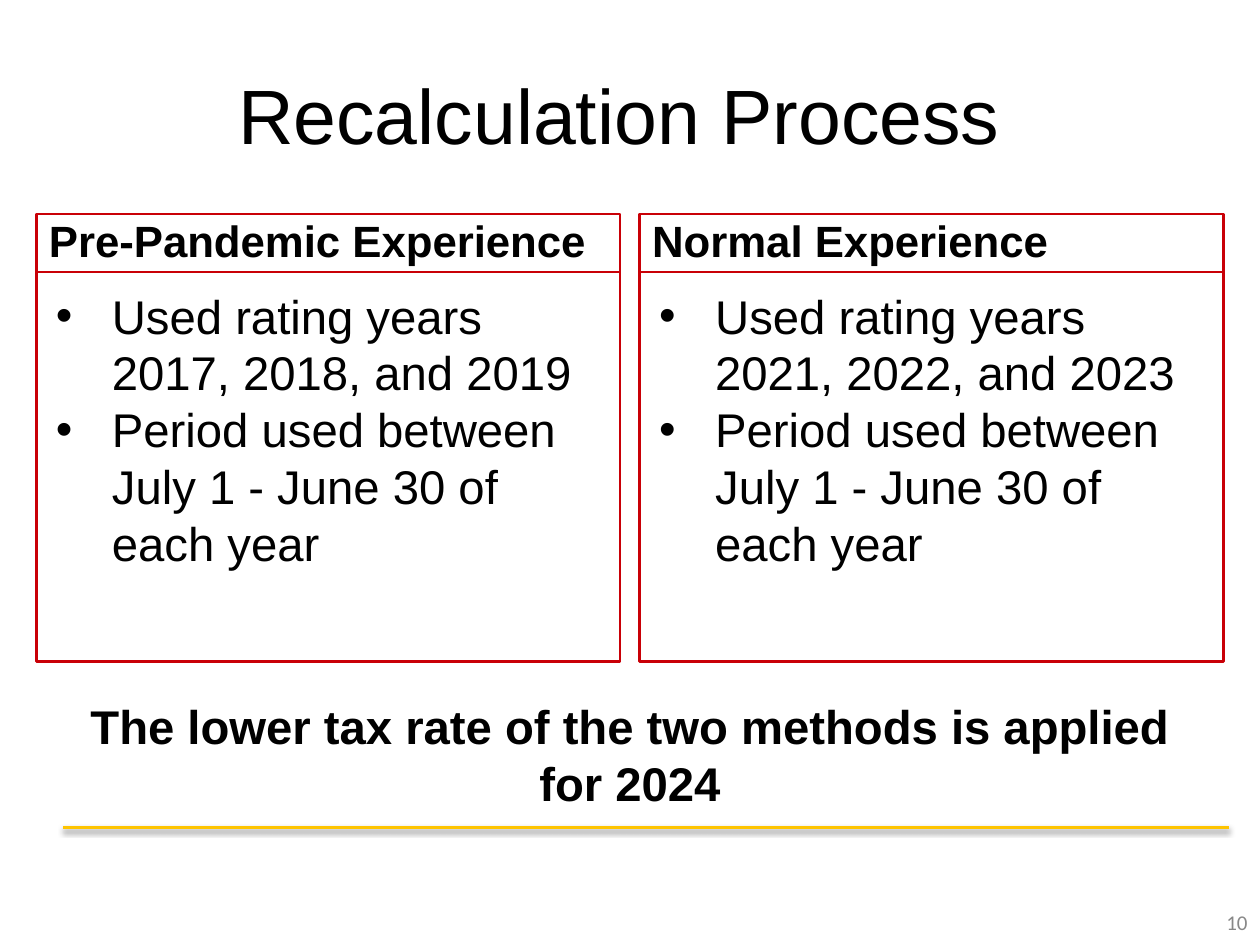
from lxml import etree
from pptx import Presentation
from pptx import util as u
from pptx.dml.color import RGBColor
from pptx.enum import shapes, text
from pptx.oxml import ns

Pt = u.Pt
RED, GOLD, BLACK, GREY = "C90007", "FEC400", "000000", "888888"


def color(value):
    return RGBColor.from_string(value)


def add_text(lines, left, top, width, height, *, size, font="Arial", fill=BLACK,
             bold=False, align="LEFT", anchor="MIDDLE", border=None,
             bullets=False, inset_top=3.6):
    """Add a box with one paragraph per line; border draws a red-style frame."""
    place = Pt(left), Pt(top), Pt(width), Pt(height)
    if border:
        box = page.shapes.add_shape(shapes.MSO_SHAPE.RECTANGLE, *place)
        box.shadow.inherit = False
        box.fill.background()
        box.line.color.rgb = color(border)
        box.line.width = Pt(1.5)
    else:
        box = page.shapes.add_textbox(*place)
    frame = box.text_frame
    frame.word_wrap = True
    frame.vertical_anchor = getattr(text.MSO_ANCHOR, anchor)
    frame.margin_top = Pt(inset_top)
    for number, line in enumerate(lines):
        para = frame.add_paragraph() if number else frame.paragraphs[0]
        para.alignment = getattr(text.PP_ALIGN, align)
        if bullets:
            props = para._p.get_or_add_pPr()
            props.set("marL", str(Pt(36)))
            props.set("indent", str(Pt(-32)))
            etree.SubElement(props, ns.qn("a:buFont"), typeface="Arial")
            etree.SubElement(props, ns.qn("a:buChar"), char="•")
        span = para.add_run()
        span.text = line
        span.font.name = font
        span.font.size = Pt(size)
        span.font.bold = bold
        span.font.color.rgb = color(fill)


deck = Presentation()
deck.slide_width, deck.slide_height = Pt(720), Pt(540)
page = deck.slides.add_slide(deck.slide_layouts[6])

# Gold footer rule with a soft shadow
rule = page.shapes.add_connector(
    shapes.MSO_CONNECTOR.STRAIGHT, Pt(36), Pt(473), Pt(702), Pt(473))
rule.line.color.rgb = color(GOLD)
rule.line.width = Pt(2)
effects = etree.SubElement(rule._element.spPr, ns.qn("a:effectLst"))
shadow = etree.SubElement(
    effects, ns.qn("a:outerShdw"), blurRad=str(Pt(3.1)), dist=str(Pt(1.6)),
    dir="5400000", rotWithShape="0")
shade = etree.SubElement(shadow, ns.qn("a:srgbClr"), val=BLACK)
etree.SubElement(shade, ns.qn("a:alpha"), val="37000")

add_text(["Recalculation Process "], 36, 20.25, 648, 90, size=44, align="CENTER")
add_text(["10"], 552, 512.5, 168, 28.8, size=12, font="Calibri", fill=GREY,
         align="RIGHT")

# Two methods side by side: heading above, details below
methods = [
    ("Pre-Pandemic Experience", "2017, 2018, and 2019"),
    ("Normal Experience", "2021, 2022, and 2023"),
]
column_width, column_step = 333.4, 344.7
heading_top, heading_height, details_height = 122.4, 33.1, 222.7
for column, (heading, years) in enumerate(methods):
    left = 20.9 + column * column_step
    add_text([heading], left, heading_top, column_width, heading_height,
             size=25, bold=True, anchor="BOTTOM", border=RED)
    add_text([f"Used rating years {years}",
              "Period used between July 1 - June 30 of each year"],
             left, heading_top + heading_height, column_width, details_height,
             size=27, anchor="TOP", border=RED, bullets=True, inset_top=8.4)

add_text(["The lower tax rate of the two methods is applied for 2024"],
         36, 386, 648, 90, size=27, bold=True, align="CENTER")

deck.save("out.pptx")
